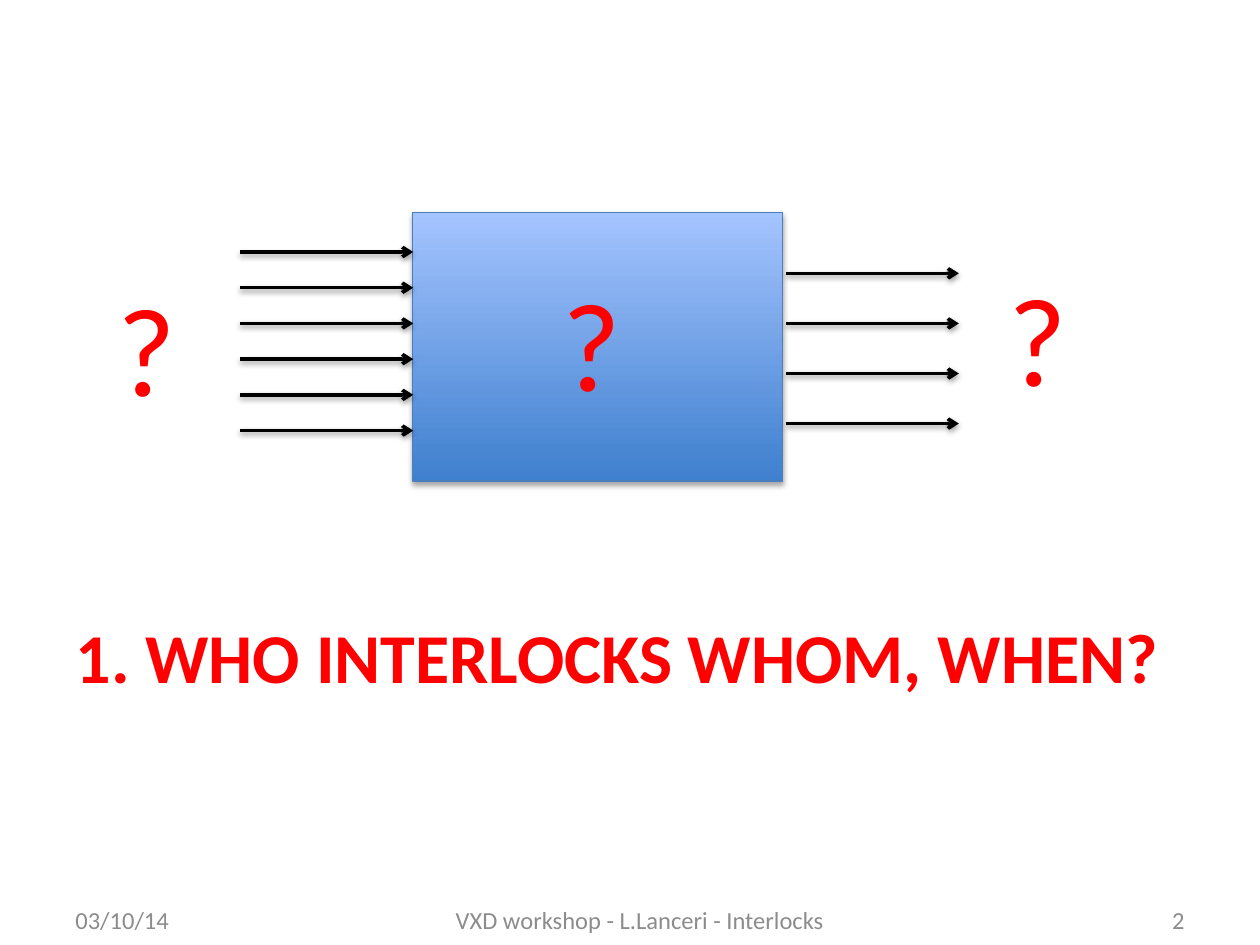
from dataclasses import dataclass

from lxml.etree import SubElement
from pptx import Presentation
from pptx.dml.color import RGBColor as RGB
from pptx.enum.shapes import MSO_CONNECTOR as Connector, MSO_SHAPE as Shape
from pptx.enum.text import MSO_ANCHOR as Anchor, MSO_AUTO_SIZE as AutoSize, PP_ALIGN as Align
from pptx.oxml.ns import qn
from pptx.util import Cm, Pt


@dataclass(frozen=True)
class Theme:
    font: str = "Calibri"
    accent: RGB = RGB(0xFF, 0x00, 0x00)
    muted: RGB = RGB(0x8C, 0x8C, 0x8C)
    signal: RGB = RGB(0x00, 0x00, 0x00)
    box_bottom: RGB = RGB(0x3F, 0x80, 0xCE)
    box_top: RGB = RGB(0xA4, 0xC4, 0xFF)
    box_edge: RGB = RGB(0x4B, 0x7E, 0xBC)
    title_size: int = 40
    mark_size: int = 72
    footer_size: int = 14


class SlideBuilder:
    def __init__(self, slide, theme):
        self.slide = slide
        self.theme = theme

    def _write(self, frame, text, size, color, align=Align.LEFT, bold=False):
        frame.text = text
        paragraph = frame.paragraphs[0]
        paragraph.alignment = align
        font = paragraph.font
        font.name, font.size, font.bold = self.theme.font, Pt(size), bold
        font.color.rgb = color

    def _drop_shadow(self, properties, distance, opacity):
        """Add a soft downward shadow; the line must already be set."""
        effects = properties.find(qn("a:effectLst"))
        if effects is None:
            effects = SubElement(properties, qn("a:effectLst"))
        shadow = SubElement(effects, qn("a:outerShdw"), blurRad=str(Pt(3.15)),
                            dist=str(Pt(distance)), dir="5400000", rotWithShape="0")
        color = SubElement(shadow, qn("a:srgbClr"), val="000000")
        SubElement(color, qn("a:alpha"), val=str(opacity * 1000))

    def title(self, text, left, top, width, height):
        title = self.slide.shapes.title
        title.left, title.top, title.width, title.height = map(Cm, (left, top, width, height))
        frame = title.text_frame
        frame.vertical_anchor = Anchor.TOP
        self._write(frame, text, self.theme.title_size, self.theme.accent, bold=True)

    def footer(self, text, left, width, align):
        frame = self.slide.shapes.add_textbox(Cm(left), Cm(18.03), Cm(width), Cm(1.01)).text_frame
        frame.word_wrap = True
        frame.vertical_anchor = Anchor.MIDDLE
        self._write(frame, text, self.theme.footer_size, self.theme.muted, align)

    def box(self, left, top, width, height):
        box = self.slide.shapes.add_shape(Shape.RECTANGLE, *map(Cm, (left, top, width, height)))
        box.fill.gradient()
        box.fill.gradient_angle = 90
        for stop, color in zip(box.fill.gradient_stops, (self.theme.box_bottom, self.theme.box_top)):
            stop.color.rgb = color
        box.line.color.rgb = self.theme.box_edge
        box.line.width = Pt(0.75)
        box.shadow.inherit = False
        self._drop_shadow(box._element.spPr, 1.8, 35)

    def arrow(self, start, end, y):
        arrow = self.slide.shapes.add_connector(Connector.STRAIGHT, Cm(start), Cm(y), Cm(end), Cm(y))
        arrow.line.color.rgb = self.theme.signal
        arrow.line.width = Pt(2)
        properties = arrow._element.spPr
        SubElement(properties.find(qn("a:ln")), qn("a:tailEnd"), type="arrow")
        self._drop_shadow(properties, 1.6, 38)

    def arrows(self, start, end, top, gap, count):
        for index in range(count):
            self.arrow(start, end, top + index * gap)

    def question_mark(self, left, top):
        frame = self.slide.shapes.add_textbox(Cm(left), Cm(top), Cm(1.7), Cm(3.33)).text_frame
        frame.word_wrap = False
        frame.auto_size = AutoSize.SHAPE_TO_FIT_TEXT
        self._write(frame, "?", self.theme.mark_size, self.theme.accent)


def main():
    deck = Presentation()
    deck.slide_width, deck.slide_height = Cm(25.4), Cm(19.05)
    title_only = deck.slide_layouts[5]
    builder = SlideBuilder(deck.slides.add_slide(title_only), Theme())

    builder.title("1. WHO INTERLOCKS WHOM, WHEN?", 1.27, 12.24, 22.86, 3.78)
    builder.footer("03/10/14", 1.27, 4.11, Align.LEFT)
    builder.footer("VXD workshop - L.Lanceri - Interlocks", 5.38, 15.04, Align.CENTER)
    builder.footer("2", 20.88, 3.25, Align.RIGHT)

    builder.box(8.31, 4.29, 7.47, 5.41)
    builder.arrows(4.84, 8.33, top=5.08, gap=0.72, count=6)
    builder.arrows(15.85, 19.33, top=5.51, gap=1.01, count=4)
    for column in range(3):
        builder.question_mark(2.11 + column * 8.99, 5.33 - column * 0.1)

    deck.save("out.pptx")


if __name__ == "__main__":
    main()
